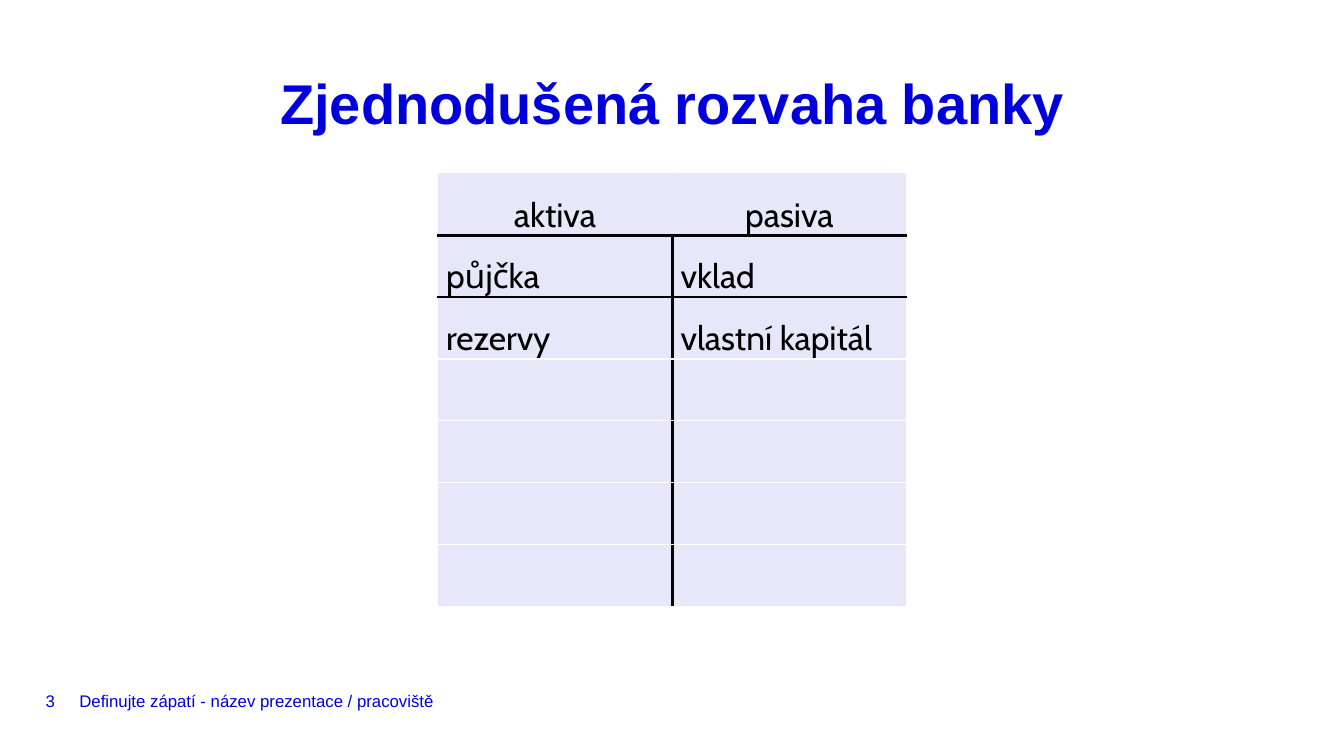
import pptx
import pptx.dml.color
import pptx.enum.text
import pptx.oxml
import pptx.oxml.ns
import pptx.util
from pptx.util import Pt

ANCHOR = pptx.enum.text.MSO_ANCHOR
ALIGN = pptx.enum.text.PP_ALIGN
BLUE, BLACK, WHITE, LAVENDER = "0000DC", "000000", "FFFFFF", "E7E7F9"


def color(value):
    return pptx.dml.color.RGBColor.from_string(value)


def write(frame, text, size=12, font="Arial", fill=BLUE, bold=False,
          align=ALIGN.LEFT, line_spacing=None):
    paragraph = frame.paragraphs[0]
    paragraph.alignment = align
    if line_spacing:
        paragraph.line_spacing = Pt(line_spacing)
    run = paragraph.add_run()
    run.text = text
    run.font.size = Pt(size)
    run.font.name = font
    run.font.bold = bold
    run.font.color.rgb = color(fill)


class SlideBuilder:
    def __init__(self, presentation):
        self.slide = presentation.slides.add_slide(presentation.slide_layouts[6])

    def text(self, text, left, top, width, height, anchor=ANCHOR.MIDDLE, wrap=True, **style):
        box = self.slide.shapes.add_textbox(Pt(left), Pt(top), Pt(width), Pt(height))
        frame = box.text_frame
        frame.margin_left = frame.margin_top = frame.margin_right = frame.margin_bottom = 0
        frame.vertical_anchor = anchor
        frame.word_wrap = wrap
        write(frame, text, **style)

    def border(self, cell, side, line_color, width):
        line = pptx.oxml.parse_xml(
            f'<a:ln{side} {pptx.oxml.ns.nsdecls("a")} w="{Pt(width)}">'
            f'<a:solidFill><a:srgbClr val="{line_color}"/></a:solidFill></a:ln{side}>')
        cell._tc.get_or_add_tcPr().append(line)

    def balance_sheet(self, rows, left, top, column_width, header_height, row_height):
        height = header_height + row_height * (len(rows) - 1)
        frame = self.slide.shapes.add_table(
            len(rows), 2, Pt(left), Pt(top), Pt(2 * column_width), Pt(height))
        table = frame.table
        table.first_row = table.horz_banding = False
        for column in table.columns:
            column.width = Pt(column_width)
        rules = [(WHITE, 1), (BLACK, 2.25), (BLACK, 1.5)]
        rules += [(WHITE, 1)] * (len(rows) - 2)
        for row_index, values in enumerate(rows):
            is_header = row_index == 0
            table.rows[row_index].height = Pt(header_height if is_header else row_height)
            middle = (LAVENDER, 1) if is_header else (BLACK, 2.25)
            for column_index, value in enumerate(values):
                cell = table.cell(row_index, column_index)
                verticals = [(WHITE, 1), middle, (WHITE, 1)]
                self.border(cell, "L", *verticals[column_index])
                self.border(cell, "R", *verticals[column_index + 1])
                self.border(cell, "T", *rules[row_index])
                self.border(cell, "B", *rules[row_index + 1])
                cell.fill.solid()
                cell.fill.fore_color.rgb = color(LAVENDER)
                cell.vertical_anchor = ANCHOR.BOTTOM
                cell.margin_left = Pt(0.75 if is_header else 6)
                cell.margin_right = cell.margin_top = Pt(0.75)
                cell.margin_bottom = 0
                if value:
                    write(cell.text_frame, value, size=24, font="Cabin", fill=BLACK,
                          align=ALIGN.CENTER if is_header else ALIGN.LEFT)


def main():
    presentation = pptx.Presentation()
    presentation.slide_width = Pt(960)
    presentation.slide_height = Pt(540)
    builder = SlideBuilder(presentation)
    builder.text("Definujte zápatí - název prezentace / pracoviště", 56.7, 490.5, 623.5, 20)
    builder.text("3", 32.6, 490.5, 20, 20, wrap=False)
    builder.text("Zjednodušená rozvaha banky", 56.7, 56.7, 846.7, 35.5, anchor=ANCHOR.TOP,
                 size=40, bold=True, align=ALIGN.CENTER, line_spacing=40)
    rows = [("aktiva", "pasiva"), ("půjčka", "vklad"), ("rezervy", "vlastní kapitál")]
    rows += [("", "")] * 4
    builder.balance_sheet(rows, 312.6, 123, 167.5, 45.2, 44.15)
    presentation.save("out.pptx")


if __name__ == "__main__":
    main()
